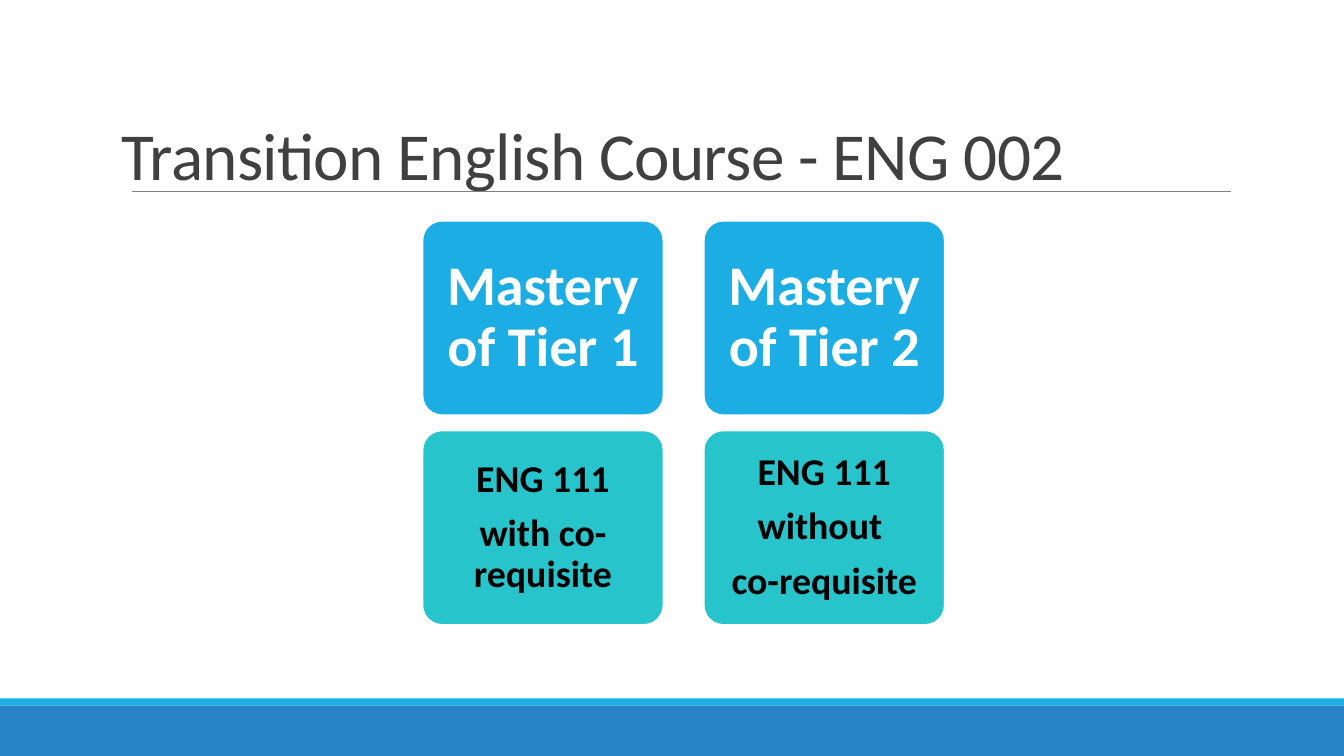
"""Build the slide on the transition English course and its two mastery tiers."""
import pptx
import pptx.dml.color
import pptx.enum.shapes
import pptx.enum.text
import pptx.oxml.ns
import pptx.util
from lxml import etree

Inches = pptx.util.Inches
Pt = pptx.util.Pt
RGBColor = pptx.dml.color.RGBColor
SHAPE = pptx.enum.shapes.MSO_SHAPE
ALIGN = pptx.enum.text.PP_ALIGN
ANCHOR = pptx.enum.text.MSO_ANCHOR

WHITE = RGBColor(0xFF, 0xFF, 0xFF)
BLACK = RGBColor(0x00, 0x00, 0x00)
DARK = RGBColor(0x40, 0x40, 0x40)
GREY = RGBColor(0x80, 0x80, 0x80)
NAVY = RGBColor(0x26, 0x83, 0xC6)
BLUE = RGBColor(0x1C, 0xAD, 0xE4)
TEAL = RGBColor(0x28, 0xC4, 0xCC)

TIERS = [
    ("Mastery of Tier 1", ["ENG 111", "with co-requisite"]),
    ("Mastery of Tier 2", ["ENG 111", "without ", "co-requisite"]),
]
LEFT, TOP = 4.19, 2.19
WIDTH, HEIGHT = 2.39, 1.93
STEP_X, STEP_Y = 2.79, 2.08


def put_text(shape, lines, size, color, bold=False, align=ALIGN.CENTER,
             anchor=ANCHOR.MIDDLE, inset=0.1, base=None, lead=0.9,
             after=0, track=0):
    frame = shape.text_frame
    frame.word_wrap = True
    frame.auto_size = pptx.enum.text.MSO_AUTO_SIZE.NONE
    frame.vertical_anchor = anchor
    frame.margin_left = frame.margin_right = Inches(inset)
    frame.margin_top = Inches(inset)
    frame.margin_bottom = Inches(inset if base is None else base)
    for i, line in enumerate(lines):
        para = frame.add_paragraph() if i else frame.paragraphs[0]
        para.alignment = align
        para.line_spacing = lead
        para.space_before = Pt(0)
        para.space_after = Pt(after)
        run = para.add_run()
        run.text = line
        run.font.name = "Calibri"
        run.font.size = Pt(size)
        run.font.bold = bold
        run.font.color.rgb = color
        if track:
            run._r.get_or_add_rPr().set("spc", str(round(track * 100)))


def add_box(slide, kind, left, top, width, height, fill):
    box = slide.shapes.add_shape(kind, Inches(left), Inches(top),
                                 Inches(width), Inches(height))
    box.shadow.inherit = False
    box.fill.solid()
    box.fill.fore_color.rgb = fill
    box.line.fill.background()
    return box


def add_card(slide, col, row, fill):
    card = add_box(slide, SHAPE.ROUNDED_RECTANGLE, LEFT + col * STEP_X,
                   TOP + row * STEP_Y, WIDTH, HEIGHT, fill)
    card.adjustments[0] = 0.1
    card.line.color.rgb = WHITE
    card.line.width = Pt(1.25)
    return card


def add_rule(slide, left, right, top):
    rule = slide.shapes.add_connector(
        pptx.enum.shapes.MSO_CONNECTOR.STRAIGHT,
        Inches(left), Inches(top), Inches(right), Inches(top))
    rule.line.color.rgb = GREY
    rule.line.width = Pt(0.5)
    etree.SubElement(rule._element.spPr, pptx.oxml.ns.qn("a:effectLst"))


def set_title(slide, text):
    title = slide.shapes.title
    title.left, title.top = Inches(1.11), Inches(1.08)
    title.width, title.height = Inches(11), Inches(1.59)
    put_text(title, [text], 48, DARK, align=ALIGN.LEFT, anchor=ANCHOR.BOTTOM,
             base=0.74, lead=0.85, track=-0.5)


def main():
    deck = pptx.Presentation()
    deck.slide_width, deck.slide_height = Inches(13.33), Inches(7.5)
    slide = deck.slides.add_slide(deck.slide_layouts[5])
    add_box(slide, SHAPE.RECTANGLE, 0, 7, 13.33, 0.5, NAVY)
    add_box(slide, SHAPE.RECTANGLE, 0, 6.93, 13.33, 0.07, BLUE)
    add_rule(slide, 1.31, 12.21, 1.9)
    set_title(slide, "Transition English Course - ENG 002")
    for col, (tier, course) in enumerate(TIERS):
        put_text(add_card(slide, col, 0, BLUE), [tier], 40, WHITE,
                 bold=True, inset=0.17, after=14)
        put_text(add_card(slide, col, 1, TEAL), course, 27, BLACK,
                 bold=True, inset=0.11, after=9.45)
    deck.save("out.pptx")


if __name__ == "__main__":
    main()
